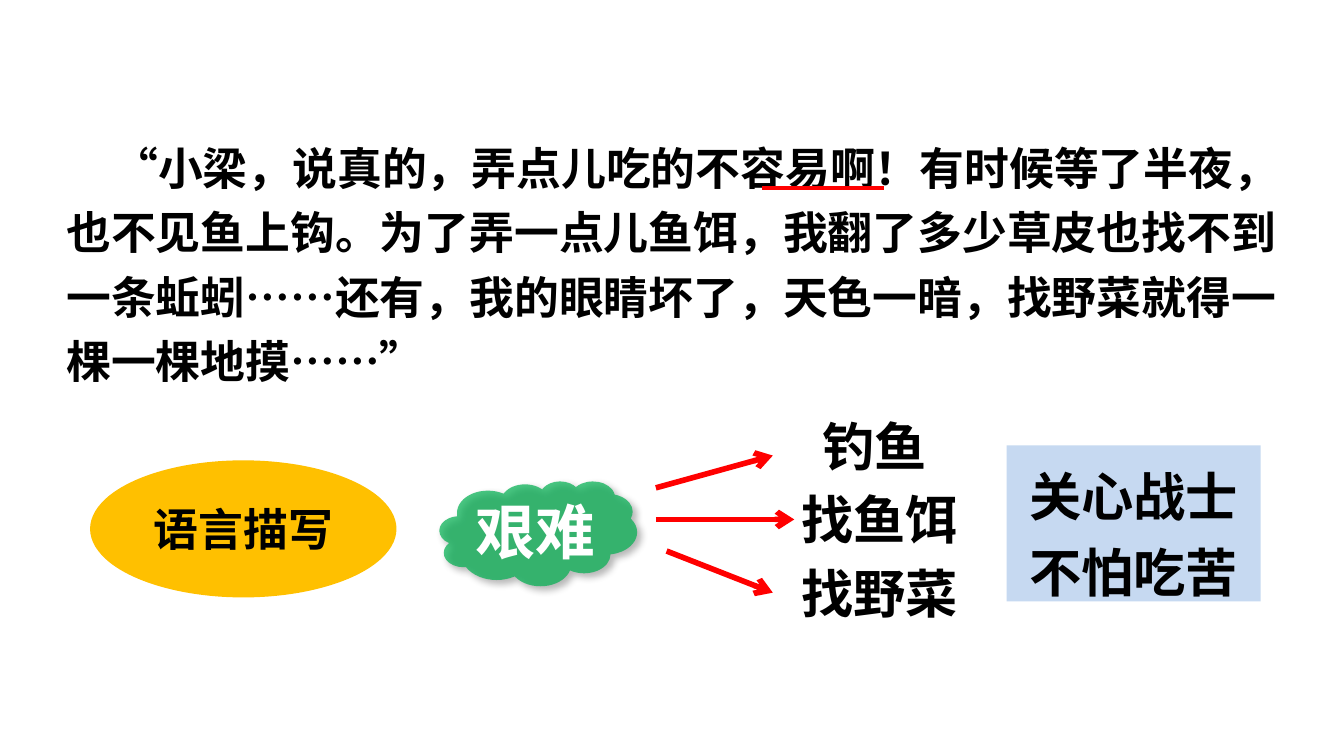
from lxml import etree
from pptx import Presentation
from pptx import util as u
from pptx.dml.color import RGBColor
from pptx.enum import shapes, text
from pptx.oxml.ns import qn

PX = 4572  # 200 px to the inch
SANS = "Noto Sans CJK SC"
RED, BLACK, WHITE = "FF0000", "000000", "FFFFFF"
QUOTE = ("“小梁，说真的，弄点儿吃的不容易啊！有时候等了半夜，也不见鱼上钩。"
         "为了弄一点儿鱼饵，我翻了多少草皮也找不到一条蚯蚓……还有，我的眼睛坏了，"
         "天色一暗，找野菜就得一棵一棵地摸……”")


def px(*values):
    return [u.Emu(v * PX) for v in values]


def rgb(color):
    return RGBColor.from_string(color)


def sub(parent, tag, **attrs):
    return etree.SubElement(parent, qn(tag), attrs)


def write(sp, lines, size, color=BLACK, font=SANS, align=text.PP_ALIGN.LEFT,
          spacing=None, anchor=text.MSO_ANCHOR.TOP, wrap=True):
    tf = sp.text_frame
    tf.word_wrap = wrap
    tf.vertical_anchor = anchor
    tf.text = "\n".join(lines)
    for p in tf.paragraphs:
        p.alignment = align
        p.line_spacing = spacing
        for r in p.runs:
            r.font.size, r.font.bold, r.font.name = u.Pt(size), True, font
            r.font.color.rgb = rgb(color)
            sub(r._r.get_or_add_rPr(), "a:ea", typeface=SANS)


def add_text(s, box, lines, size, **style):
    sp = s.shapes.add_textbox(*px(*box))
    write(sp, lines, size, **style)


def add_filled(s, kind, box, color):
    sp = s.shapes.add_shape(kind, *px(*box))
    sp.shadow.inherit = False
    sp.fill.solid()
    sp.fill.fore_color.rgb = rgb(color)
    sp.line.fill.background()
    return sp


def add_line(s, start, end, width, arrow=False):
    line = s.shapes.add_connector(shapes.MSO_CONNECTOR.STRAIGHT, *px(*start, *end))
    line.line.color.rgb = rgb(RED)
    line.line.width = u.Pt(width)
    if arrow:
        sub(line.line._get_or_add_ln(), "a:tailEnd", type="arrow")
    sub(line._element.spPr, "a:effectLst")


def add_quote(s, x, y, w, h):
    """Quoted passage with an indented first line and a red underline."""
    sp = add_filled(s, shapes.MSO_SHAPE.RECTANGLE, (x, y, w, h), WHITE)
    write(sp, [QUOTE], 24, spacing=1.2)
    sp.text_frame.margin_top = px(25)[0]
    sp.text_frame.paragraphs[0]._p.get_or_add_pPr().set("indent", str(70 * PX))
    add_line(s, (x + 1055, y + 112), (x + 1237, y + 112), 2.25)


def add_method(s, x, y, w, h):
    sp = add_filled(s, shapes.MSO_SHAPE.OVAL, (x, y, w, h), "FFC000")
    write(sp, ["语言描写"], 24, font="Times New Roman",
          align=text.PP_ALIGN.CENTER, anchor=text.MSO_ANCHOR.MIDDLE)


def add_cloud(s, x, y, w, h):
    """Translucent green cloud with a soft shadow and its caption."""
    sp = add_filled(s, shapes.MSO_SHAPE.CLOUD, (x, y, w, h), "00B050")
    color = sp._element.spPr.find(qn("a:solidFill"))[0]
    sub(color, "a:alpha", val="71000")
    effects = sp._element.spPr.find(qn("a:effectLst"))
    shadow = sub(effects, "a:outerShdw", blurRad="50800", dist="38100",
                 dir="2700000", algn="tl", rotWithShape="0")
    sub(sub(shadow, "a:srgbClr", val=BLACK), "a:alpha", val="40000")
    add_text(s, (x + 34, y + 10, 220, 128), ["艰难"], 32, color=WHITE, wrap=False)


def add_hardships(s, x, y):
    """Three red arrows fanning out to the three hardships."""
    arrows = [((0, 120), (174, 72)), ((0, 167), (206, 167)), ((16, 214), (174, 276))]
    for (x1, y1), (x2, y2) in arrows:
        add_line(s, (x + x1, y + y1), (x + x2, y + y2), 3, arrow=True)
    labels = [("钓鱼", 228, 236), ("找鱼饵", 197, 410), ("找野菜", 197, 330)]
    for i, (label, dx, w) in enumerate(labels):
        add_text(s, (x + dx, y + 110 * i, w, 114), [label], 28)


def add_conclusion(s, x, y, w, h):
    sp = add_filled(s, shapes.MSO_SHAPE.RECTANGLE, (x, y, w, h), "C6D9F1")
    write(sp, ["关心战士", "不怕吃苦"], 28, align=text.PP_ALIGN.CENTER, spacing=1.2)


def main():
    prs = Presentation()
    prs.slide_width, prs.slide_height = px(2000, 1125)
    s = prs.slides.add_slide(prs.slide_layouts[6])
    add_quote(s, 79, 168, 1850, 424)
    add_method(s, 134, 685, 456, 204)
    add_cloud(s, 654, 716, 294, 156)
    add_hardships(s, 976, 606)
    add_conclusion(s, 1498, 663, 378, 232)
    prs.save("out.pptx")


if __name__ == "__main__":
    main()
